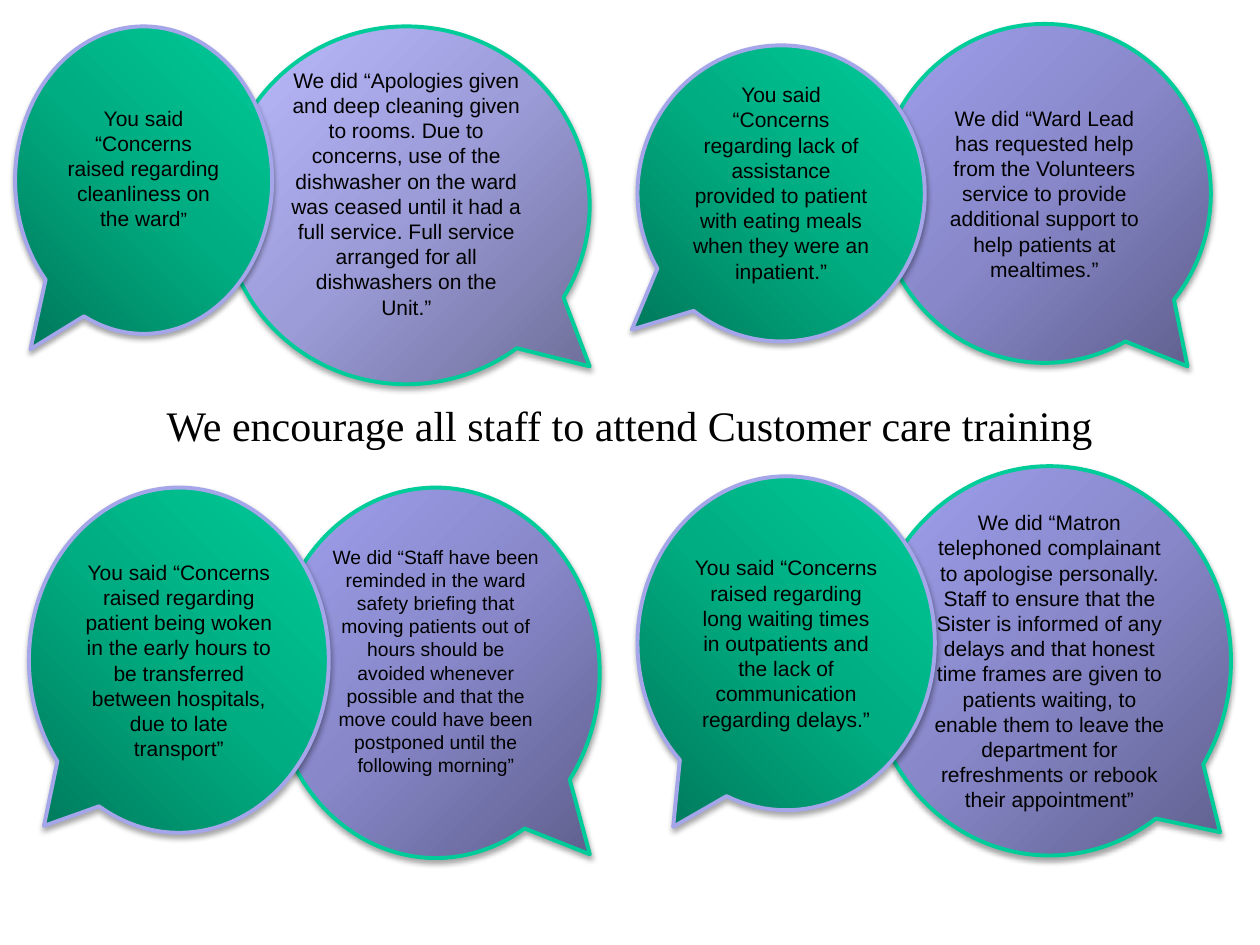
from dataclasses import dataclass

from pptx import Presentation
from pptx.dml.color import RGBColor
from pptx.enum.shapes import MSO_SHAPE
from pptx.enum.text import MSO_ANCHOR, MSO_AUTO_SIZE, PP_ALIGN
from pptx.oxml import parse_xml
from pptx.oxml.ns import nsdecls
from pptx.util import Inches, Pt

CALLOUT = MSO_SHAPE.OVAL_CALLOUT
MIDDLE = MSO_ANCHOR.MIDDLE
CENTER = PP_ALIGN.CENTER
NO_AUTOFIT = MSO_AUTO_SIZE.NONE
TITLE_ONLY = 5

BLACK = RGBColor(0x00, 0x00, 0x00)
GREEN = RGBColor(0x00, 0xCC, 0x99)
GREEN_MID = RGBColor(0x00, 0xAC, 0x81)
GREEN_DARK = RGBColor(0x00, 0x79, 0x5B)
LAVENDER = RGBColor(0xA5, 0xA5, 0xE9)
VIOLET = RGBColor(0xA0, 0xA0, 0xEE)
VIOLET_MID = RGBColor(0x87, 0x87, 0xC9)
VIOLET_DARK = RGBColor(0x5F, 0x5F, 0x8D)
PALE = RGBColor(0xBB, 0xBB, 0xFF)
PALE_MID = RGBColor(0x9C, 0x9C, 0xD9)
PALE_DARK = RGBColor(0x6E, 0x6E, 0x98)


@dataclass
class Style:
    colors: tuple
    outline: RGBColor
    focus: str


SAID = Style((GREEN_DARK, GREEN_MID, GREEN), LAVENDER, 't="100000" r="100000"')
DID = Style((VIOLET_DARK, VIOLET_MID, VIOLET), GREEN, 'l="100000" t="100000"')
DID_PALE = Style((PALE_DARK, PALE_MID, PALE), GREEN, DID.focus)

BUBBLES = [
    (DID, (6.89, 3.7, 2.88, 3.09), (0.47, 0.44), 0.05,
     [("We did “Matron telephoned complainant to apologise personally. Staff to "
       "ensure that the Sister is informed of any delays and that honest time "
       "frames are given to patients waiting, to enable them to leave the "
       "department for refreshments or rebook their appointment”", 12)]),
    (DID, (2.16, 3.87, 2.6, 2.94), (0.47, 0.49), 0.24,
     [("We did “Staff have been reminded in the ward safety briefing that moving "
       "patients out of hours should be avoided whenever possible and that the "
       "move could have been postponed until the following morning”", 11)]),
    (SAID, (0.23, 3.87, 2.38, 2.74), (-0.45, 0.48), 0.05,
     [("You said “Concerns raised regarding patient being woken in the early "
       "hours to be transferred between hospitals, due to late transport”", 12)]),
    (DID_PALE, (1.77, 0.21, 2.91, 2.84), (0.5, 0.45), 0.24,
     [("We did “Apologies given and deep cleaning given to rooms. Due to concerns, "
       "use of the dishwasher on the ward was ceased until it had a full service. "
       "Full service arranged for all dishwashers on the Unit.”", 12)]),
    (DID, (6.97, 0.19, 2.64, 2.69), (0.43, 0.51), 0.05,
     [("We did “Ward Lead has requested help from the Volunteers service to "
       "provide additional support to help patients at mealtimes.”", 12)]),
    (SAID, (5.06, 3.78, 2.36, 2.65), (-0.38, 0.55), 0.05,
     [("You said “Concerns raised regarding long waiting times in outpatients "
       "and the lack of communication regarding delays.”", 12)]),
    (SAID, (5.06, 0.36, 2.28, 2.35), (-0.52, 0.46), 0.22,
     [("You said “Concerns regarding lack of assistance provided to patient with "
       "eating meals when they were an inpatient.”", 12)]),
    (SAID, (0.12, 0.21, 2.04, 2.44), (-0.44, 0.55), 0.24,
     [("You said “Concerns raised regarding cleanliness on the ward", 12),
      ("”", 11)]),
]


def add_span(para, text, size, font_name):
    span = para.add_run()
    span.text = text
    span.font.size = Pt(size)
    span.font.name = font_name
    span.font.color.rgb = BLACK


def add_title(page, text):
    title = page.shapes.title
    title.left, title.top = Inches(0.75), Inches(3.12)
    title.width, title.height = Inches(8.5), Inches(0.5)
    frame = title.text_frame
    frame.auto_size = NO_AUTOFIT
    frame.word_wrap = True
    frame.vertical_anchor = MIDDLE
    para = frame.paragraphs[0]
    para.alignment = CENTER
    add_span(para, text, 24, "Times New Roman")


def set_radial_fill(shape, style):
    stops = "".join(
        f'<a:gs pos="{position}"><a:srgbClr val="{color}"/></a:gs>'
        for position, color in zip((0, 50000, 100000), style.colors))
    shape.fill.background()
    fill = shape._element.spPr.find("{*}noFill")
    fill.getparent().replace(fill, parse_xml(
        f'<a:gradFill {nsdecls("a")} rotWithShape="1"><a:gsLst>{stops}</a:gsLst>'
        f'<a:path path="circle"><a:fillToRect {style.focus}/></a:path></a:gradFill>'))


def set_soft_shadow(shape):
    shape.shadow.inherit = False
    effects = shape._element.spPr.find("{*}effectLst")
    effects.append(parse_xml(
        f'<a:outerShdw {nsdecls("a")} blurRad="{Pt(3.1)}" dist="{Pt(1.8)}" '
        'dir="5400000" rotWithShape="0"><a:srgbClr val="000000">'
        '<a:alpha val="35000"/></a:srgbClr></a:outerShdw>'))


def add_bubble(page, style, place, tail, bottom_margin, spans):
    bubble = page.shapes.add_shape(CALLOUT, *map(Inches, place))
    bubble.adjustments[0], bubble.adjustments[1] = tail
    set_radial_fill(bubble, style)
    bubble.line.color.rgb = style.outline
    bubble.line.width = Pt(2.25)
    set_soft_shadow(bubble)
    frame = bubble.text_frame
    frame.word_wrap = True
    frame.vertical_anchor = MIDDLE
    frame.margin_bottom = Inches(bottom_margin)
    para = frame.paragraphs[0]
    para.alignment = CENTER
    for text, size in spans:
        add_span(para, text, size, "Arial")


def main():
    deck = Presentation()
    deck.slide_width, deck.slide_height = Inches(10), Inches(7.5)
    page = deck.slides.add_slide(deck.slide_layouts[TITLE_ONLY])
    add_title(page, "We encourage all staff to attend Customer care training")
    for bubble in BUBBLES:
        add_bubble(page, *bubble)
    deck.save("out.pptx")


if __name__ == "__main__":
    main()
